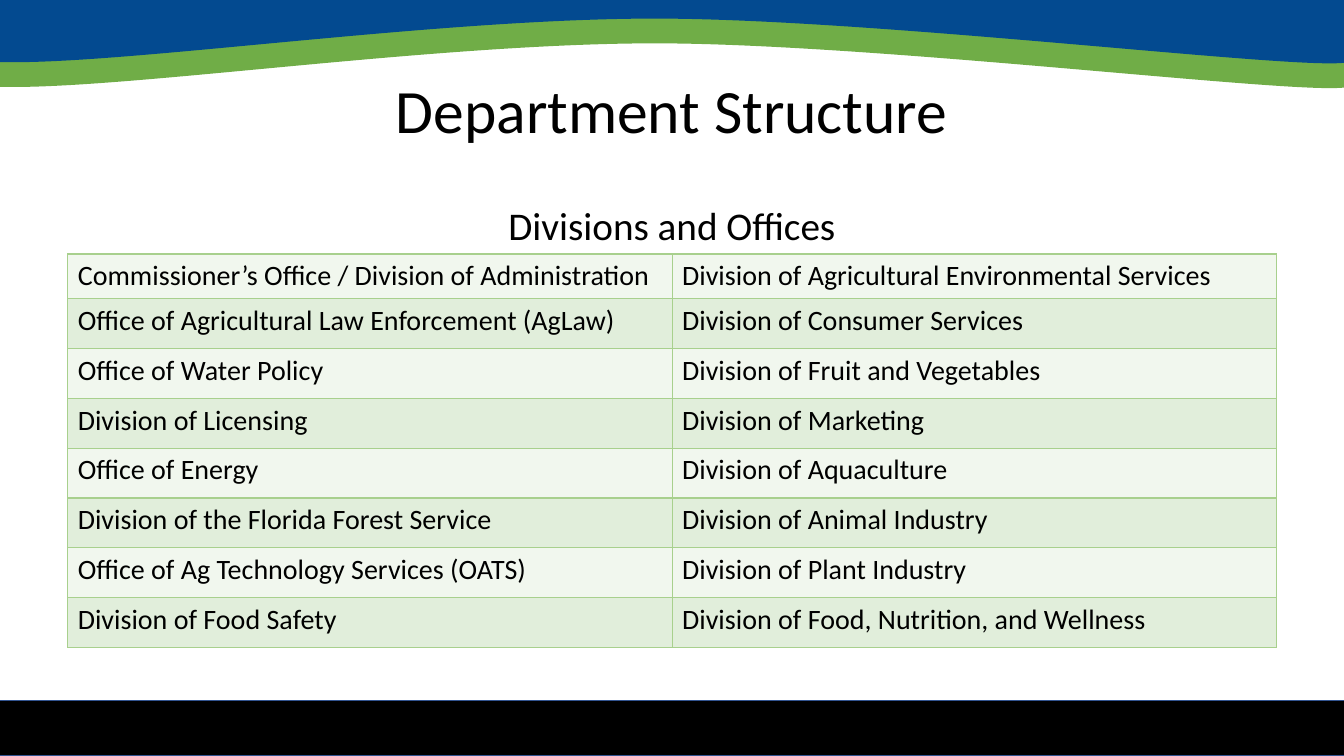
from dataclasses import dataclass

from lxml.etree import SubElement
from pptx import Presentation
from pptx.dml.color import RGBColor as RGB
from pptx.enum.shapes import MSO_SHAPE as SHAPE
from pptx.enum.text import MSO_ANCHOR as ANCHOR, PP_ALIGN as ALIGN
from pptx.oxml.ns import qn
from pptx.util import Pt


@dataclass(frozen=True)
class Theme:
    font: str = "Calibri"
    black: str = "000000"
    blue: str = "034A90"
    green: str = "70AD47"
    footer_line: str = "325491"
    border: str = "A8D08D"
    bands: tuple = ("F1F7EE", "E1EEDB")
    title: int = 44
    heading: int = 28
    cell: int = 20


THEME = Theme()

ROWS = [
    ("Commissioner’s Office / Division of Administration",
     "Division of Agricultural Environmental Services"),
    ("Office of Agricultural Law Enforcement (AgLaw)", "Division of Consumer Services"),
    ("Office of Water Policy", "Division of Fruit and Vegetables"),
    ("Division of Licensing", "Division of Marketing"),
    ("Office of Energy", "Division of Aquaculture"),
    ("Division of the Florida Forest Service", "Division of Animal Industry"),
    ("Office of Ag Technology Services (OATS)", "Division of Plant Industry"),
    ("Division of Food Safety", "Division of Food, Nutrition, and Wellness"),
]

WAVE_HEIGHT = 52.6
WAVE_SIDE = [(963.4, 0.7), (963.4, 51.8)]
WAVE_CURVES = [(942, 59.8), (628.6, 20.9), (468, 20.9),
               (306.7, 20.9), (79.2, 55.4), (-3.6, 51.8)]


def bend_lines(outline, first):
    lines = outline.findall(qn("a:lnTo"))[first:first + len(WAVE_CURVES)]
    for i in range(0, len(lines), 3):
        curve = outline.makeelement(qn("a:cubicBezTo"))
        lines[i].addprevious(curve)
        for line in lines[i:i + 3]:
            curve.append(line[0])
            outline.remove(line)


def add_wave(slide, top, color):
    builder = slide.shapes.build_freeform(Pt(-2.2), Pt(top))
    builder.add_line_segments(
        [(Pt(x), Pt(top + y)) for x, y in WAVE_SIDE + WAVE_CURVES])
    sp = builder.convert_to_shape()
    outline = sp._element.find(".//" + qn("a:path"))
    bend_lines(outline, len(WAVE_SIDE))
    outline.set("h", str(Pt(WAVE_HEIGHT)))
    sp.height = Pt(WAVE_HEIGHT)
    sp.shadow.inherit = False
    sp.fill.solid()
    sp.fill.fore_color.rgb = RGB.from_string(color)
    sp.line.fill.background()


def add_footer(slide):
    sp = slide.shapes.add_shape(SHAPE.RECTANGLE, Pt(-3.6), Pt(500.4), Pt(967), Pt(39.6))
    sp.shadow.inherit = False
    sp.fill.solid()
    sp.fill.fore_color.rgb = RGB.from_string(THEME.black)
    sp.line.color.rgb = RGB.from_string(THEME.footer_line)
    sp.line.width = Pt(1)


def set_text(tf, text, size):
    tf.text = text
    p = tf.paragraphs[0]
    font = p.runs[0].font
    font.name = THEME.font
    font.size = Pt(size)
    font.color.rgb = RGB.from_string(THEME.black)
    return p


def add_heading(slide, text, top, height, size, anchor, space_before=0):
    tf = slide.shapes.add_textbox(Pt(66), Pt(top), Pt(828), Pt(height)).text_frame
    tf.word_wrap = True
    tf.vertical_anchor = anchor
    p = set_text(tf, text, size)
    p.alignment = ALIGN.CENTER
    p.line_spacing = 0.9
    p.space_before = Pt(space_before)


def add_borders(cell):
    tc_pr = cell._tc.get_or_add_tcPr()
    for side in ("lnL", "lnR", "lnT", "lnB"):
        ln = SubElement(tc_pr, qn(f"a:{side}"), w=str(Pt(1)))
        fill = SubElement(ln, qn("a:solidFill"))
        SubElement(fill, qn("a:srgbClr"), val=THEME.border)


def add_divisions_table(slide):
    frame = slide.shapes.add_table(len(ROWS), 2, Pt(48.4), Pt(181.4), Pt(863.4), Pt(281.2))
    table = frame.table
    table.first_row = False
    table.horz_banding = False
    for column in table.columns:
        column.width = Pt(431.7)
    for i, names in enumerate(ROWS):
        table.rows[i].height = Pt(35.6 if i else 32)
        for j, name in enumerate(names):
            cell = table.cell(i, j)
            set_text(cell.text_frame, name, THEME.cell)
            add_borders(cell)
            cell.fill.solid()
            cell.fill.fore_color.rgb = RGB.from_string(THEME.bands[i % 2])


def main():
    prs = Presentation()
    prs.slide_width, prs.slide_height = Pt(960), Pt(540)
    slide = prs.slides.add_slide(prs.slide_layouts[6])
    add_wave(slide, 10.1, THEME.green)
    add_wave(slide, -7.6, THEME.blue)
    add_footer(slide)
    add_heading(slide, "Department Structure", 28.8, 104.4, THEME.title, ANCHOR.MIDDLE)
    add_heading(slide, "Divisions and Offices", 144, 342.7, THEME.heading, ANCHOR.TOP, 10)
    add_divisions_table(slide)
    prs.save("out.pptx")


if __name__ == "__main__":
    main()
